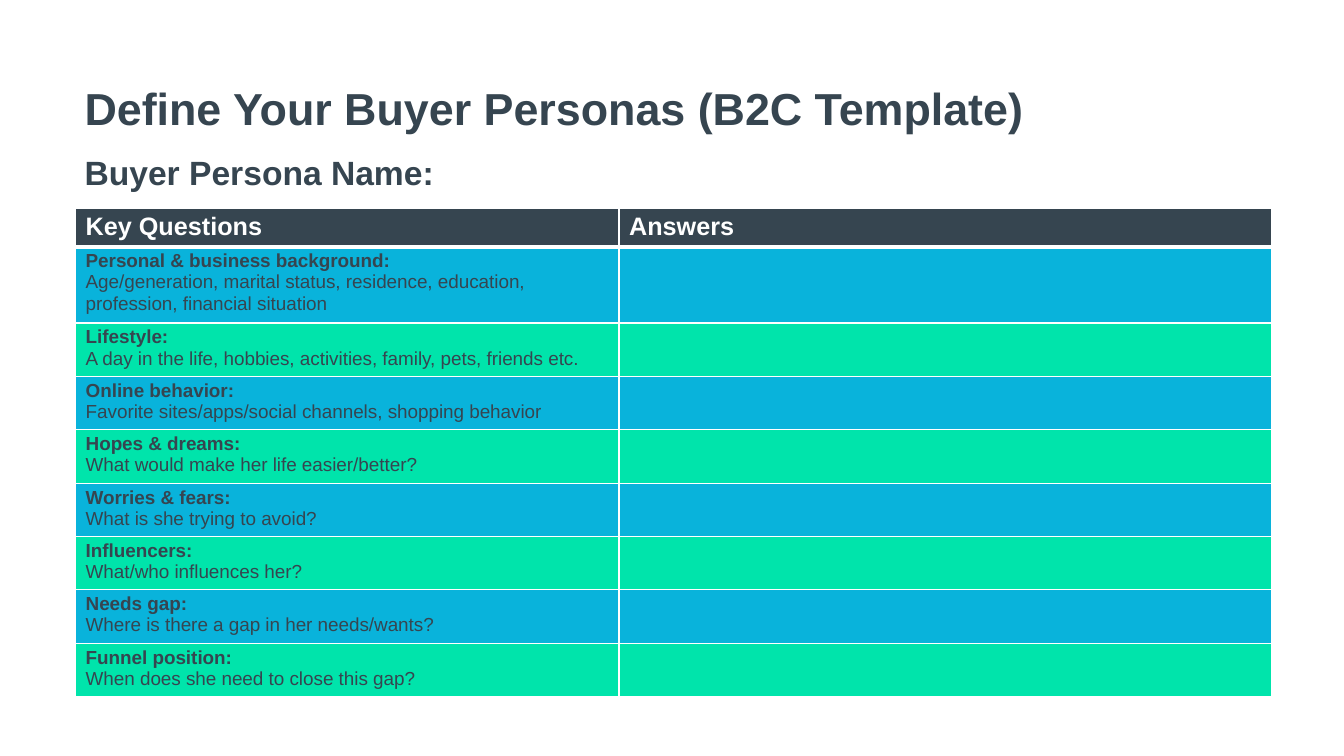
from lxml import etree
from pptx import Presentation
from pptx.dml.color import RGBColor
from pptx.enum.text import MSO_ANCHOR
from pptx.oxml.ns import qn
from pptx.util import Inches, Pt

TOP, BOTTOM = MSO_ANCHOR.TOP, MSO_ANCHOR.BOTTOM
SLATE = RGBColor(0x36, 0x45, 0x50)
WHITE = RGBColor(0xFF, 0xFF, 0xFF)
BLUE = RGBColor(0x09, 0xB3, 0xDB)
GREEN = RGBColor(0x00, 0xE4, 0xAB)
FONT = "Arial"

LEFT = 0.74
COLUMN_WIDTHS = [5.39, 6.47]
HEADER_HEIGHT, FIRST_ROW_HEIGHT, ROW_HEIGHT = 0.37, 0.72, 0.52
HEADERS = ["Key Questions", "Answers"]
QUESTIONS = [
    ("Personal & business background:",
     "Age/generation, marital status, residence, education, profession, financial situation"),
    ("Lifestyle:", "A day in the life, hobbies, activities, family, pets, friends etc."),
    ("Online behavior:", "Favorite sites/apps/social channels, shopping behavior"),
    ("Hopes & dreams:", "What would make her life easier/better?"),
    ("Worries & fears:", "What is she trying to avoid?"),
    ("Influencers:", "What/who influences her?"),
    ("Needs gap:", "Where is there a gap in her needs/wants?"),
    ("Funnel position:", "When does she need to close this gap?"),
]


def add_run(paragraph, text, size, color, bold=True):
    run = paragraph.add_run()
    run.text = text
    run.font.name = FONT
    run.font.size = Pt(size)
    run.font.bold = bold
    run.font.color.rgb = color


def add_heading(slide, text, top, width, height, size, anchor, bottom_margin=0.05):
    box = slide.shapes.add_textbox(Inches(LEFT), Inches(top), Inches(width), Inches(height))
    frame = box.text_frame
    frame.word_wrap = True
    frame.vertical_anchor = anchor
    frame.margin_bottom = Inches(bottom_margin)
    paragraph = frame.paragraphs[0]
    paragraph.line_spacing = 0.9
    add_run(paragraph, text, size, SLATE)


def style_cell(cell, fill, bottom_border=1):
    """Set margins, white borders and fill; borders must precede the fill in the XML."""
    cell.margin_top = cell.margin_bottom = Inches(0.04)
    properties = cell._tc.get_or_add_tcPr()
    for side, width in (("L", 1), ("R", 1), ("T", 1), ("B", bottom_border)):
        line = etree.SubElement(properties, qn(f"a:ln{side}"), w=str(Pt(width)))
        solid = etree.SubElement(line, qn("a:solidFill"))
        etree.SubElement(solid, qn("a:srgbClr"), val=str(WHITE))
    cell.fill.solid()
    cell.fill.fore_color.rgb = fill


def add_persona_table(slide):
    heights = [HEADER_HEIGHT, FIRST_ROW_HEIGHT] + [ROW_HEIGHT] * (len(QUESTIONS) - 1)
    table = slide.shapes.add_table(
        len(heights), len(HEADERS), Inches(LEFT + 0.01), Inches(2.07),
        Inches(sum(COLUMN_WIDTHS)), Inches(sum(heights))).table
    for column, width in zip(table.columns, COLUMN_WIDTHS):
        column.width = Inches(width)
    for row, height in zip(table.rows, heights):
        row.height = Inches(height)

    for column, header in enumerate(HEADERS):
        cell = table.cell(0, column)
        style_cell(cell, SLATE, bottom_border=3)
        add_run(cell.text_frame.paragraphs[0], header, 18, WHITE)

    for row, (topic, prompt) in enumerate(QUESTIONS, start=1):
        fill = BLUE if row % 2 else GREEN
        question, answer = table.cell(row, 0), table.cell(row, 1)
        style_cell(question, fill, bottom_border=1)
        style_cell(answer, fill)
        frame = question.text_frame
        add_run(frame.paragraphs[0], topic, 13.5, SLATE)
        add_run(frame.add_paragraph(), prompt, 13.5, SLATE, bold=False)
        answer.text_frame.paragraphs[0].font.size = Pt(13.5)


def main():
    presentation = Presentation()
    presentation.slide_width = Inches(13.33)
    presentation.slide_height = Inches(7.5)
    slide = presentation.slides.add_slide(presentation.slide_layouts[6])
    add_heading(slide, "Define Your Buyer Personas (B2C Template)",
                0.16, 11.5, 1.45, 32, BOTTOM, bottom_margin=0.27)
    add_heading(slide, "Buyer Persona Name:", 1.5, 11.92, 0.5, 24, TOP)
    add_persona_table(slide)
    presentation.save("out.pptx")


if __name__ == "__main__":
    main()
